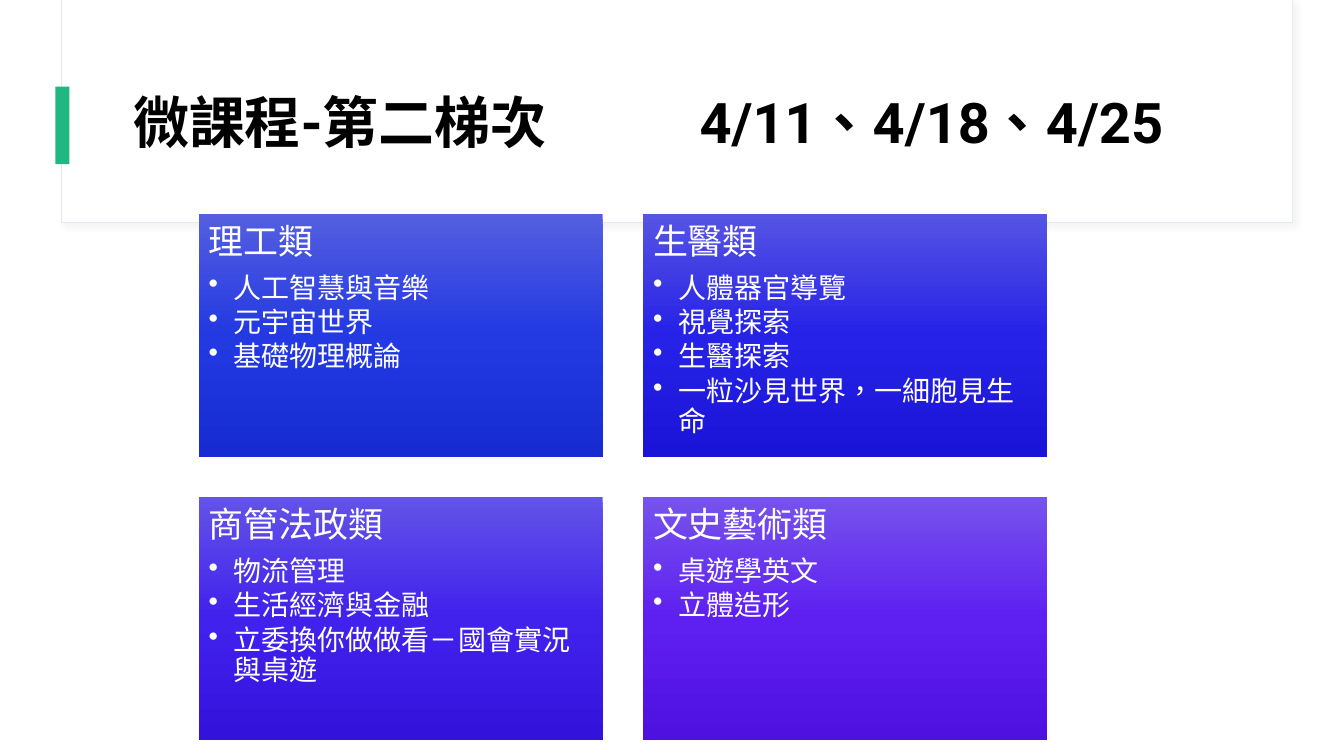
from copy import deepcopy

from lxml import etree
from pptx import Presentation
from pptx.dml.color import RGBColor
from pptx.enum.shapes import MSO_SHAPE
from pptx.enum.text import MSO_ANCHOR, MSO_AUTO_SIZE, PP_ALIGN
from pptx.oxml import parse_xml
from pptx.oxml.ns import nsdecls, qn
from pptx.util import Emu, Inches, Pt

RECT = MSO_SHAPE.RECTANGLE
LEFT = PP_ALIGN.LEFT
TOP, MIDDLE = MSO_ANCHOR.TOP, MSO_ANCHOR.MIDDLE
NO_AUTOFIT = MSO_AUTO_SIZE.NONE

FONT = "Roboto"
WHITE = RGBColor(0xFF, 0xFF, 0xFF)
BLACK = RGBColor(0x00, 0x00, 0x00)
GREEN = RGBColor(0x21, 0xB7, 0x80)
PALE = RGBColor(0xE3, 0xE9, 0xEF)

# Card grid, in inches
GRID_LEFT, GRID_TOP = 1.97, 2.12
CARD_W, CARD_H, GAP = 4.01, 2.41, 0.4
COLUMNS = 2
INDENT = 0.25
TITLE_TAB = 5.62

# Heading, courses, gradient from top to bottom
CARDS = [
    ("理工類", ["人工智慧與音樂", "元宇宙世界", "基礎物理概論"],
     ("545FDF", "2339E2", "162CD2")),
    ("生醫類", ["人體器官導覽", "視覺探索", "生醫探索", "一粒沙見世界，一細胞見生命"],
     ("5654E3", "2622E7", "1914D7")),
    ("商管法政類", ["物流管理", "生活經濟與金融", "立委換你做做看－國會實況與桌遊"],
     ("6353E7", "4121EC", "3313DC")),
    ("文史藝術類", ["桌遊學英文", "立體造形"],
     ("7653EC", "5E1FF1", "4F11E0")),
]


def add_rect(slide, left, top, width, height, fill=None, line=None):
    sp = slide.shapes.add_shape(RECT, *map(Inches, (left, top, width, height)))
    sp.shadow.inherit = False
    if fill is not None:
        sp.fill.solid()
        sp.fill.fore_color.rgb = fill
    if line is None:
        sp.line.fill.background()
    else:
        sp.line.color.rgb = line
        sp.line.width = Pt(0.75)
    return sp


def add_soft_shadow(sp):
    effects = sp._element.spPr.find(qn("a:effectLst"))
    effects.append(parse_xml(
        f'<a:outerShdw {nsdecls("a")} blurRad="{Pt(4)}" dist="{Pt(3)}" dir="2700000">'
        '<a:srgbClr val="D9D9D9"><a:alpha val="30000"/></a:srgbClr></a:outerShdw>'))


def set_gradient(sp, colors):
    sp.fill.gradient()
    sp.fill.gradient_angle = 270
    stop_list = sp._element.spPr.find(".//" + qn("a:gsLst"))
    stop_list.append(deepcopy(stop_list[0]))
    for i, (stop, color) in enumerate(zip(sp.fill.gradient_stops, colors)):
        stop.position = i / 2
        stop.color.rgb = RGBColor.from_string(color)


def write(p, text, size, color=WHITE, bold=False, after=0):
    p.alignment = LEFT
    p.line_spacing = 0.9
    p.space_before = Pt(0)
    p.space_after = Pt(after)
    r = p.add_run()
    r.text = text
    r.font.name = FONT
    r.font.size = Pt(size)
    r.font.bold = bold
    r.font.color.rgb = color
    r._r.get_or_add_rPr().set("lang", "zh-TW")


def add_bullet(p):
    pPr = p._p.get_or_add_pPr()
    pPr.set("marL", str(Inches(INDENT)))
    pPr.set("indent", str(-Inches(INDENT)))
    etree.SubElement(pPr, qn("a:buChar"), char="•")


def add_tab(p, position):
    tabs = etree.SubElement(p._p.get_or_add_pPr(), qn("a:tabLst"))
    etree.SubElement(tabs, qn("a:tab"), pos=str(Inches(position)), algn="l")


def format_frame(tf, anchor, inset_y):
    tf.word_wrap = True
    tf.auto_size = NO_AUTOFIT
    tf.vertical_anchor = anchor
    tf.margin_left = tf.margin_right = Inches(0.1)
    tf.margin_top = tf.margin_bottom = Inches(inset_y)


def add_header(slide):
    # White panel with a green marker
    add_soft_shadow(add_rect(slide, 0.61, 0, 12.21, 2.21, WHITE, PALE))
    add_rect(slide, 0.62, 0, 12.2, 2.2, WHITE)
    add_rect(slide, 0.55, 0.86, 0.14, 0.77, GREEN)

    # Title in front of the panel
    title = slide.shapes.title
    slide.shapes._spTree.append(title._element)
    title.left, title.top = Inches(1.22), Inches(0.6)
    title.width, title.height = Inches(11.12), Inches(1.29)
    tf = title.text_frame
    format_frame(tf, MIDDLE, 0.05)
    p = tf.paragraphs[0]
    add_tab(p, TITLE_TAB)
    write(p, "微課程-第二梯次\t4/11、4/18、4/25", 40, BLACK, bold=True)


def add_card(slide, index, heading, courses, colors):
    row, col = divmod(index, COLUMNS)
    sp = add_rect(slide, GRID_LEFT + col * (CARD_W + GAP),
                  GRID_TOP + row * (CARD_H + GAP), CARD_W, CARD_H)
    set_gradient(sp, colors)
    tf = sp.text_frame
    format_frame(tf, TOP, 0.1)
    write(tf.paragraphs[0], heading, 25, after=8.75)
    for course in courses:
        p = tf.add_paragraph()
        add_bullet(p)
        write(p, course, 20, after=3)


def main():
    prs = Presentation()
    prs.slide_width, prs.slide_height = Emu(12192000), Inches(7.5)
    slide = prs.slides.add_slide(prs.slide_layouts[5])
    add_header(slide)
    for i, card in enumerate(CARDS):
        add_card(slide, i, *card)
    prs.save("out.pptx")


if __name__ == "__main__":
    main()
